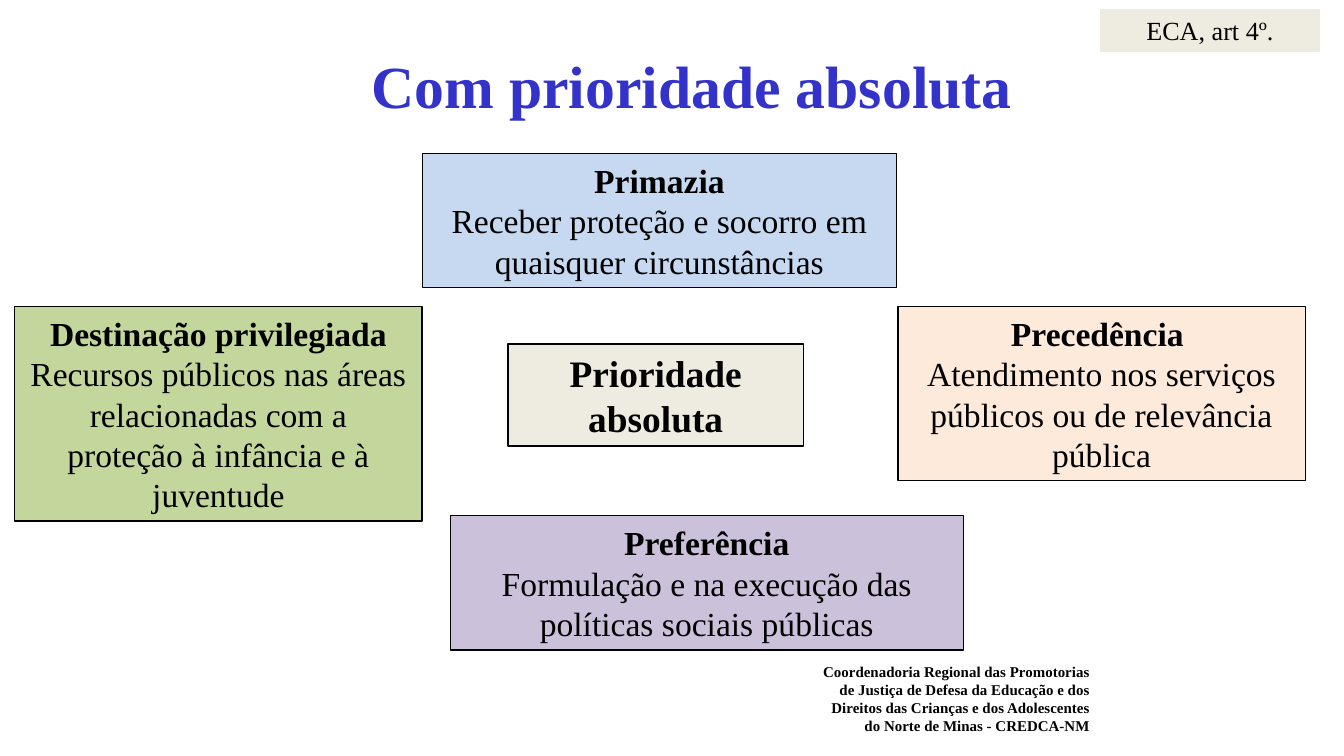
"""Build the slide on absolute priority under article 4 of the ECA."""
import dataclasses

import pptx
import pptx.dml.color
import pptx.enum.shapes
import pptx.enum.text
import pptx.util

Cm = pptx.util.Cm
Align = pptx.enum.text.PP_ALIGN
Anchor = pptx.enum.text.MSO_ANCHOR


@dataclasses.dataclass(frozen=True)
class Theme:
    font: str = "Times New Roman"
    ink: str = "000000"
    paper: str = "FFFFFF"
    title: str = "3333CC"
    blue: str = "C6D9F1"
    cream: str = "EEECE1"
    peach: str = "FDEADA"
    purple: str = "CCC1DA"
    green: str = "C3D69B"
    title_size: float = 32
    core_size: float = 20
    body_size: float = 18
    badge_size: float = 14
    footer_size: float = 8
    hairline: float = 0
    badge_line: float = 2.25


def rgb(value):
    return pptx.dml.color.RGBColor.from_string(value)


class SlideBuilder:
    def __init__(self, slide, theme):
        self.slide = slide
        self.theme = theme

    def set_text(self, shape, text, size, color, bold_count, align=Align.CENTER):
        frame = shape.text_frame
        frame.text = text
        frame.word_wrap = True
        frame.vertical_anchor = Anchor.TOP
        for index, para in enumerate(frame.paragraphs):
            para.alignment = align
            for span in para.runs:
                span.font.name = self.theme.font
                span.font.size = pptx.util.Pt(size)
                span.font.bold = index < bold_count
                span.font.color.rgb = rgb(color)

    def label(self, place, text, size, color, align=Align.CENTER):
        box = self.slide.shapes.add_textbox(*map(Cm, place))
        self.set_text(box, text, size, color, 1, align)

    def panel(self, place, fill, line, width):
        box = self.slide.shapes.add_shape(
            pptx.enum.shapes.MSO_SHAPE.RECTANGLE, *map(Cm, place))
        box.shadow.inherit = False
        box.fill.solid()
        box.fill.fore_color.rgb = rgb(fill)
        box.line.color.rgb = rgb(line)
        box.line.width = pptx.util.Pt(width)
        return box

    def card(self, place, fill, text, size, bold_count=1):
        box = self.panel(place, fill, self.theme.ink, self.theme.hairline)
        self.set_text(box, text, size, self.theme.ink, bold_count)

    def badge(self, place, text):
        theme = self.theme
        box = self.panel(place, theme.cream, theme.paper, theme.badge_line)
        self.set_text(box, text, theme.badge_size, theme.ink, 0)
        box.text_frame.word_wrap = False
        box.text_frame.vertical_anchor = Anchor.MIDDLE


def main():
    deck = pptx.Presentation()
    deck.slide_width, deck.slide_height = Cm(25.4), Cm(14.29)
    theme = Theme()
    page = SlideBuilder(deck.slides.add_slide(deck.slide_layouts[6]), theme)

    page.label((15.29, 12.4, 5.56, 1.96),
               "Coordenadoria Regional das Promotorias de Justiça de Defesa da "
               "Educação e dos Direitos das Crianças e dos Adolescentes do "
               "Norte de Minas - CREDCA-NM",
               theme.footer_size, theme.ink, Align.RIGHT)

    side_top, side_width, row_height = 5.79, 7.7, 2.54
    cards = [
        ((7.98, 2.9, 8.97, row_height), theme.blue,
         "Primazia\nReceber proteção e socorro em quaisquer circunstâncias"),
        ((16.97, side_top, side_width, 3.3), theme.peach,
         "Precedência \nAtendimento nos serviços públicos ou de relevância pública"),
        ((8.51, 9.75, 9.7, row_height), theme.purple,
         "Preferência\nFormulação e na execução das políticas sociais públicas"),
        ((0.28, side_top, side_width, 4.06), theme.green,
         "Destinação privilegiada\nRecursos públicos nas áreas relacionadas "
         "com a proteção à infância e à juventude"),
    ]
    for place, fill, text in cards:
        page.card(place, fill, text, theme.body_size)
    page.card((9.6, 6.5, 5.59, 1.93), theme.cream, "Prioridade\nabsoluta",
              theme.core_size, bold_count=2)

    page.badge((20.75, 0.13, 4.24, 0.89), "ECA, art 4º.")
    page.label((1.5, 0.79, 23.16, 1.6), "Com prioridade absoluta",
               theme.title_size, theme.title)
    deck.save("out.pptx")


if __name__ == "__main__":
    main()
